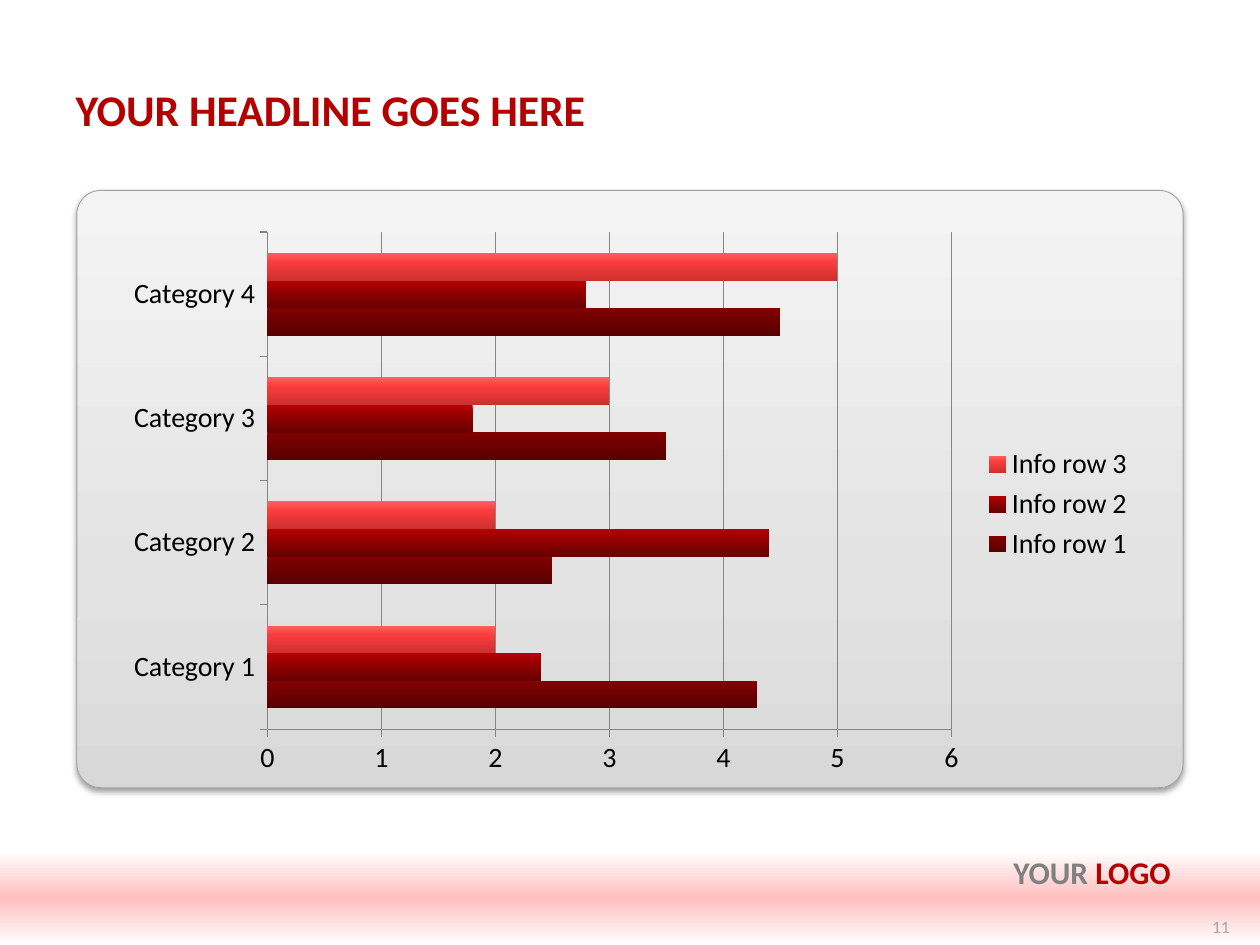
from lxml import etree
from pptx import Presentation
from pptx import util as u
from pptx.chart.data import CategoryChartData
from pptx.dml.color import RGBColor
from pptx.enum import chart as ch, shapes, text
from pptx.oxml import parse_xml
from pptx.oxml.ns import nsdecls, qn


class Theme:
    font = "Calibri"
    red, gray, pale, black = "B40000", "808080", "A6A6A6", "000000"
    edge, grid = "A1A1A1", "868686"
    panel = [(0, "F4F4F4"), (65, "E3E3E3"), (100, "D8D8D8")]
    band = [(0, "FFFFFF"), (50, "FFBFBF"), (100, "FFFFFF")]
    bars = [
        [(0, "820000"), (100, "580000")],
        [(0, "B40000"), (100, "680000")],
        [(0, "FF6161"), (35, "FA3C3C"), (100, "CC3030")],
    ]
    title_size, logo_size, axis_size, number_size = 25, 18, 16, 10


def write(p, content, size, color, bold=False, align=text.PP_ALIGN.LEFT):
    p.alignment = align
    r = p.add_run()
    r.text = content
    r.font.name, r.font.size, r.font.bold = Theme.font, u.Pt(size), bold
    r.font.color.rgb = RGBColor.from_string(color)


def shade(fill, element, stops):
    """Fill from top to bottom with (percent, colour) stops."""
    fill.gradient()
    fill.gradient_angle = 270
    stop_list = element.find(".//" + qn("a:gsLst"))
    for old in list(stop_list):
        stop_list.remove(old)
    for percent, color in stops:
        gs = etree.SubElement(stop_list, qn("a:gs"), pos=str(percent * 1000))
        etree.SubElement(gs, qn("a:srgbClr"), val=color)


prs = Presentation()
prs.slide_width, prs.slide_height = u.Cm(25.4), u.Cm(19.05)
s = prs.slides.add_slide(prs.slide_layouts[5])

# Panel and footer band
panel = s.shapes.add_shape(shapes.MSO_SHAPE.ROUNDED_RECTANGLE,
                           u.Cm(1.55), u.Cm(3.84), u.Cm(22.3), u.Cm(12.04))
panel.adjustments[0] = 0.04
panel.line.color.rgb = RGBColor.from_string(Theme.edge)
panel.line.width = u.Pt(0.5)
band = s.shapes.add_shape(shapes.MSO_SHAPE.RECTANGLE,
                          0, u.Cm(17.15), prs.slide_width, u.Cm(1.9))
band.line.fill.background()
for sp, stops in ((panel, Theme.panel), (band, Theme.band)):
    shade(sp.fill, sp.element, stops)
    sp.shadow.inherit = False
panel.element.find(".//" + qn("a:effectLst")).append(parse_xml(
    f'<a:outerShdw {nsdecls("a")} blurRad="44450" dist="25400" dir="5400000" rotWithShape="0">'
    '<a:srgbClr val="000000"><a:alpha val="38000"/></a:srgbClr></a:outerShdw>'))

# Title
title = s.shapes.title
title.left, title.top, title.width, title.height = (
    u.Cm(1.27), u.Cm(1.5), u.Cm(22.86), u.Cm(1.4))
tf = title.text_frame
tf.auto_size = text.MSO_AUTO_SIZE.NONE
tf.vertical_anchor = text.MSO_ANCHOR.MIDDLE
write(tf.paragraphs[0], "YOUR HEADLINE GOES HERE", Theme.title_size, Theme.red, bold=True)

# Bar chart
data = CategoryChartData()
data.categories = [f"Category {n}" for n in range(1, 5)]
data.add_series("Info row 1", (4.3, 2.5, 3.5, 4.5))
data.add_series("Info row 2", (2.4, 4.4, 1.8, 2.8))
data.add_series("Info row 3", (2, 2, 3, 5))
chart = s.shapes.add_chart(ch.XL_CHART_TYPE.BAR_CLUSTERED, u.Cm(2.31), u.Cm(4.45),
                           u.Cm(20.8), u.Cm(11.43), data).chart
chart.has_title = False
chart.font.name, chart.font.size = Theme.font, u.Pt(Theme.axis_size)
chart.font.color.rgb = RGBColor.from_string(Theme.black)
chart.has_legend = True
chart.legend.position = ch.XL_LEGEND_POSITION.RIGHT
chart.legend.include_in_layout = False
plot = chart.plots[0]
plot.vary_by_categories = False
plot.gap_width, plot.overlap = 150, 0
for series, stops in zip(plot.series, Theme.bars):
    series.invert_if_negative = False
    shade(series.format.fill, series._element, stops)

# Axes and gridlines
value_axis = chart.value_axis
value_axis.minimum_scale, value_axis.maximum_scale, value_axis.major_unit = 0, 6, 1
value_axis.has_major_gridlines = True
value_axis.tick_labels.number_format = "General"
value_axis.tick_labels.number_format_is_linked = False
for axis in (chart.category_axis, value_axis):
    axis.major_tick_mark = ch.XL_TICK_MARK.OUTSIDE
for part in (chart.category_axis, value_axis, value_axis.major_gridlines):
    part.format.line.color.rgb = RGBColor.from_string(Theme.grid)
    part.format.line.width = u.Pt(0.75)

# Fixed place of the plot area inside the chart
plot_area = chart.element.find(".//" + qn("c:plotArea"))
for old in plot_area.findall(qn("c:layout")):
    plot_area.remove(old)
plot_area.insert(0, parse_xml(
    f'<c:layout {nsdecls("c")}><c:manualLayout><c:layoutTarget val="inner"/>'
    '<c:xMode val="edge"/><c:yMode val="edge"/><c:x val="0.148"/><c:y val="0.02"/>'
    '<c:w val="0.663"/><c:h val="0.877"/></c:manualLayout></c:layout>'))

# Footer texts: logo line and slide number
footers = [
    ((1.27, 17.07, 22.58, 1.4), text.MSO_ANCHOR.TOP, Theme.logo_size, True,
     [("YOUR ", Theme.gray), ("LOGO", Theme.red)]),
    ((23.85, 18.29, 1.19, 0.76), text.MSO_ANCHOR.MIDDLE, Theme.number_size, False,
     [("11", Theme.pale)]),
]
for place, anchor, size, bold, runs in footers:
    tf = s.shapes.add_textbox(*map(u.Cm, place)).text_frame
    tf.word_wrap = True
    tf.vertical_anchor = anchor
    for content, color in runs:
        write(tf.paragraphs[0], content, size, color, bold=bold, align=text.PP_ALIGN.RIGHT)

prs.save("out.pptx")
